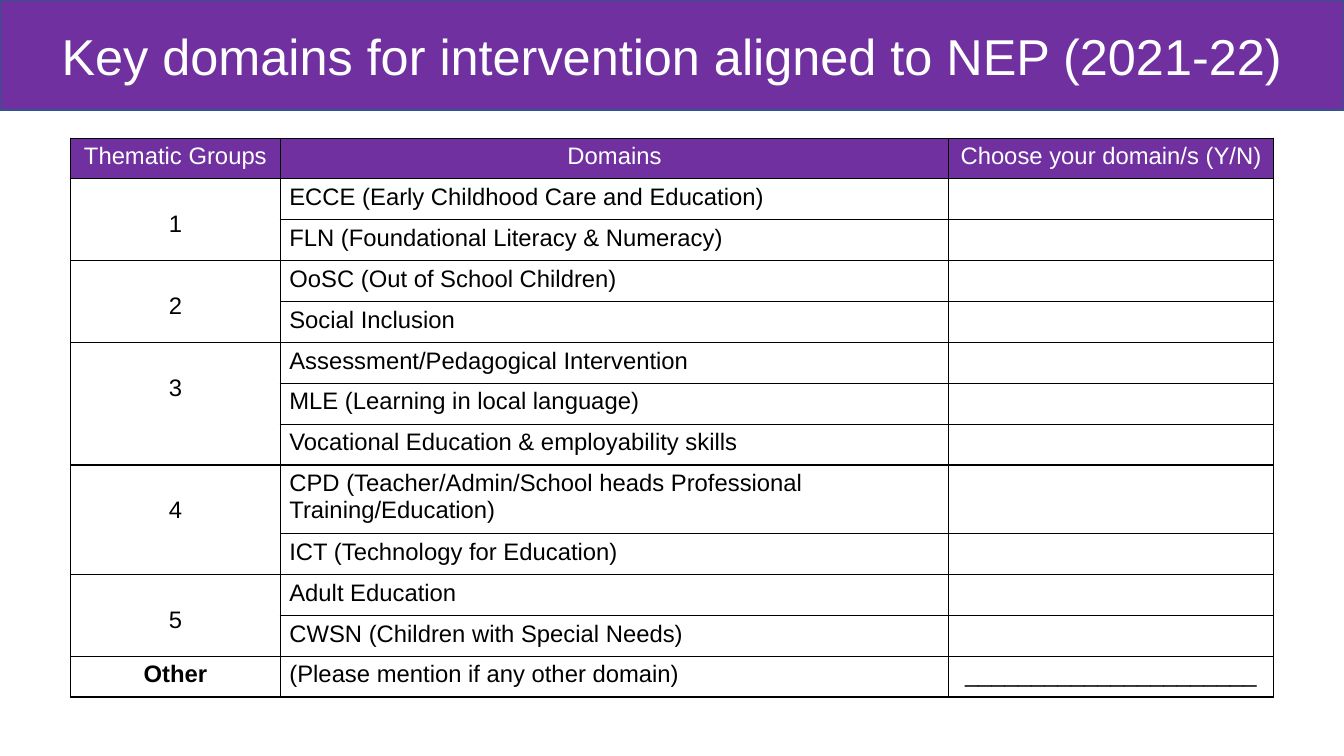
from lxml import etree
from pptx import Presentation
from pptx.dml.color import RGBColor
from pptx.enum.shapes import MSO_SHAPE
from pptx.enum.text import MSO_ANCHOR, PP_ALIGN
from pptx.oxml.ns import qn
from pptx.util import Inches, Pt

RECT = MSO_SHAPE.RECTANGLE
TOP, MIDDLE = MSO_ANCHOR.TOP, MSO_ANCHOR.MIDDLE
LEFT, CENTER = PP_ALIGN.LEFT, PP_ALIGN.CENTER

PURPLE, BLUE, WHITE, BLACK = "7030A0", "325491", "FFFFFF", "000000"
TABLE_LEFT, TABLE_TOP = 0.7, 1.37
COL_WIDTHS = (2.08, 6.63, 3.22)
TABLE_HEIGHT, TALL_ROW = 5.54, 0.68
PAD_X, PAD_Y, GROUP_PAD = 0.09, 0.05, 0.32

TITLE = "Key domains for intervention aligned to NEP (2021-22)"
HEADERS = ("Thematic Groups", "Domains", "Choose your domain/s (Y/N)")
LONG_DOMAIN = "CPD (Teacher/Admin/School heads Professional Training/Education)"
GROUPS = (
    ("1", ("ECCE (Early Childhood Care and Education)",
           "FLN (Foundational Literacy & Numeracy)")),
    ("2", ("OoSC (Out of School Children)", "Social Inclusion")),
    ("3", ("Assessment/Pedagogical Intervention",
           "MLE (Learning in local language)",
           "Vocational Education & employability skills")),
    ("4", (LONG_DOMAIN, "ICT (Technology for Education)")),
    ("5", ("Adult Education", "CWSN (Children with Special Needs)")),
    ("Other", ("(Please mention if any other domain)",)),
)
ANSWER_LINE = "_" * 22


def rgb(value):
    """Return the colour for a hex string."""
    return RGBColor.from_string(value)


def write(tf, text, size=17, color=BLACK, align=LEFT, bold=False):
    """Put one formatted line of text in a text frame."""
    tf.word_wrap = True
    p = tf.paragraphs[0]
    p.alignment = align
    r = p.add_run()
    r.text = text
    r.font.name = "Arial"
    r.font.size = Pt(size)
    r.font.bold = bold
    r.font.color.rgb = rgb(color)


def add_borders(cell, color=BLACK, width=1):
    """Draw a solid line on the four sides of a cell."""
    props = cell._tc.get_or_add_tcPr()
    for side in ("a:lnL", "a:lnR", "a:lnT", "a:lnB"):
        line = etree.SubElement(props, qn(side), w=str(Pt(width)))
        fill = etree.SubElement(line, qn("a:solidFill"))
        etree.SubElement(fill, qn("a:srgbClr"), val=color)


def style_cell(cell, fill=None):
    """Set the borders, margins and fill of a cell."""
    add_borders(cell)
    cell.margin_left = cell.margin_right = Inches(PAD_X)
    cell.margin_top = cell.margin_bottom = Inches(PAD_Y)
    cell.vertical_anchor = TOP
    if fill:
        cell.fill.solid()
        cell.fill.fore_color.rgb = rgb(fill)
    else:
        cell.fill.background()


def add_grid(slide, row_count):
    """Add the empty bordered table with its header row filled."""
    frame = slide.shapes.add_table(
        row_count, len(COL_WIDTHS), Inches(TABLE_LEFT), Inches(TABLE_TOP),
        Inches(sum(COL_WIDTHS)), Inches(TABLE_HEIGHT))
    table = frame.table
    table.first_row = table.horz_banding = False
    for column, width in zip(table.columns, COL_WIDTHS):
        column.width = Inches(width)
    row_height = (TABLE_HEIGHT - TALL_ROW) / (row_count - 1)
    for index, row in enumerate(table.rows):
        row.height = Inches(row_height)
        for cell in row.cells:
            style_cell(cell, None if index else PURPLE)
    return table


def add_domain_table(slide):
    """Add the table of thematic groups and their domains."""
    row_count = 1 + sum(len(domains) for _, domains in GROUPS)
    table = add_grid(slide, row_count)
    for col, text in enumerate(HEADERS):
        write(table.cell(0, col).text_frame, text, color=WHITE, align=CENTER)
    row = 1
    for group, domains in GROUPS:
        cell = table.cell(row, 0)
        if len(domains) > 1:
            cell.merge(table.cell(row + len(domains) - 1, 0))
            cell.margin_top = Inches(GROUP_PAD)
        write(cell.text_frame, group, align=CENTER, bold=group == "Other")
        for domain in domains:
            write(table.cell(row, 1).text_frame, domain)
            if domain == LONG_DOMAIN:
                table.rows[row].height = Inches(TALL_ROW)
            row += 1
    write(table.cell(row - 1, 2).text_frame, ANSWER_LINE, align=CENTER)


def add_title_bar(slide, width):
    """Add the title bar across the top of the slide."""
    sp = slide.shapes.add_shape(RECT, 0, 0, width, Inches(1.09))
    sp.shadow.inherit = False
    sp.fill.solid()
    sp.fill.fore_color.rgb = rgb(PURPLE)
    sp.line.color.rgb = rgb(BLUE)
    sp.line.width = Pt(1)
    sp.text_frame.vertical_anchor = MIDDLE
    write(sp.text_frame, TITLE, size=36, color=WHITE, align=CENTER)


def main():
    """Build the slide and save it."""
    prs = Presentation()
    prs.slide_width, prs.slide_height = Inches(13.33), Inches(7.5)
    s = prs.slides.add_slide(prs.slide_layouts[6])
    add_domain_table(s)
    add_title_bar(s, prs.slide_width)
    prs.save("out.pptx")


if __name__ == "__main__":
    main()
